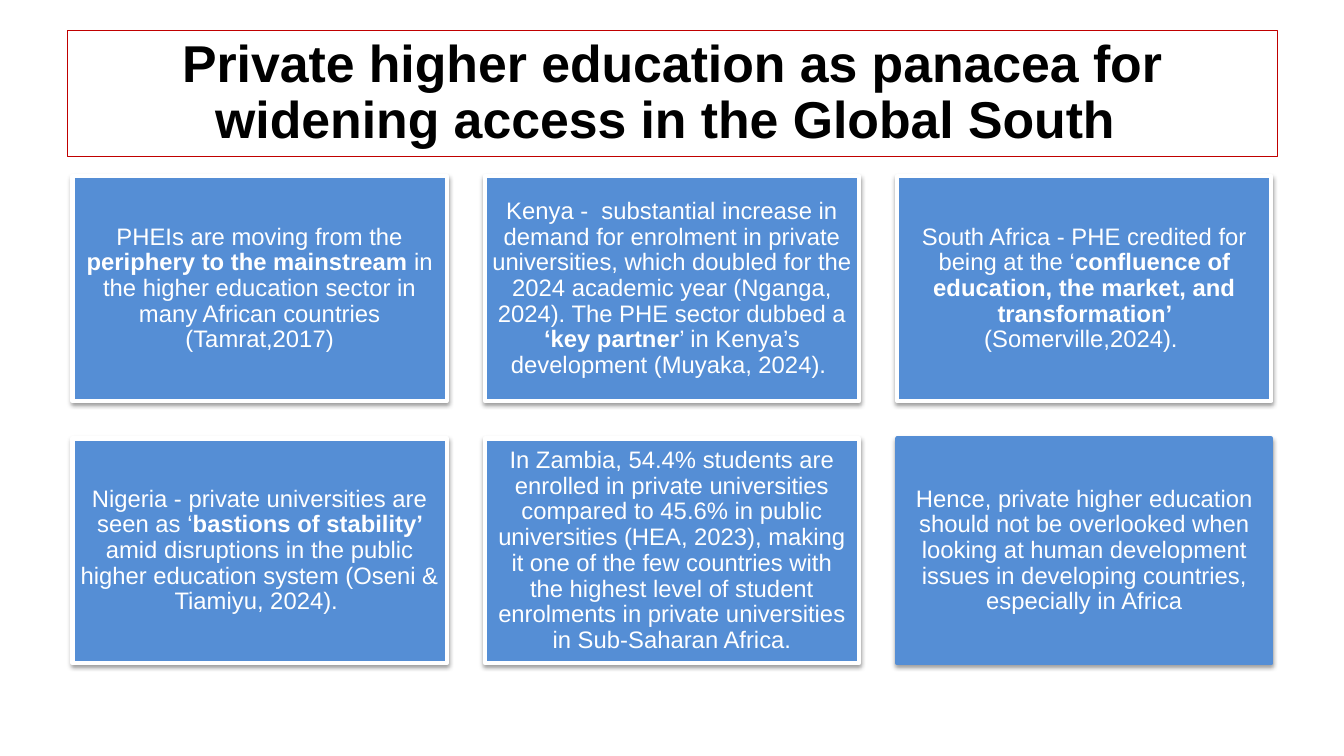
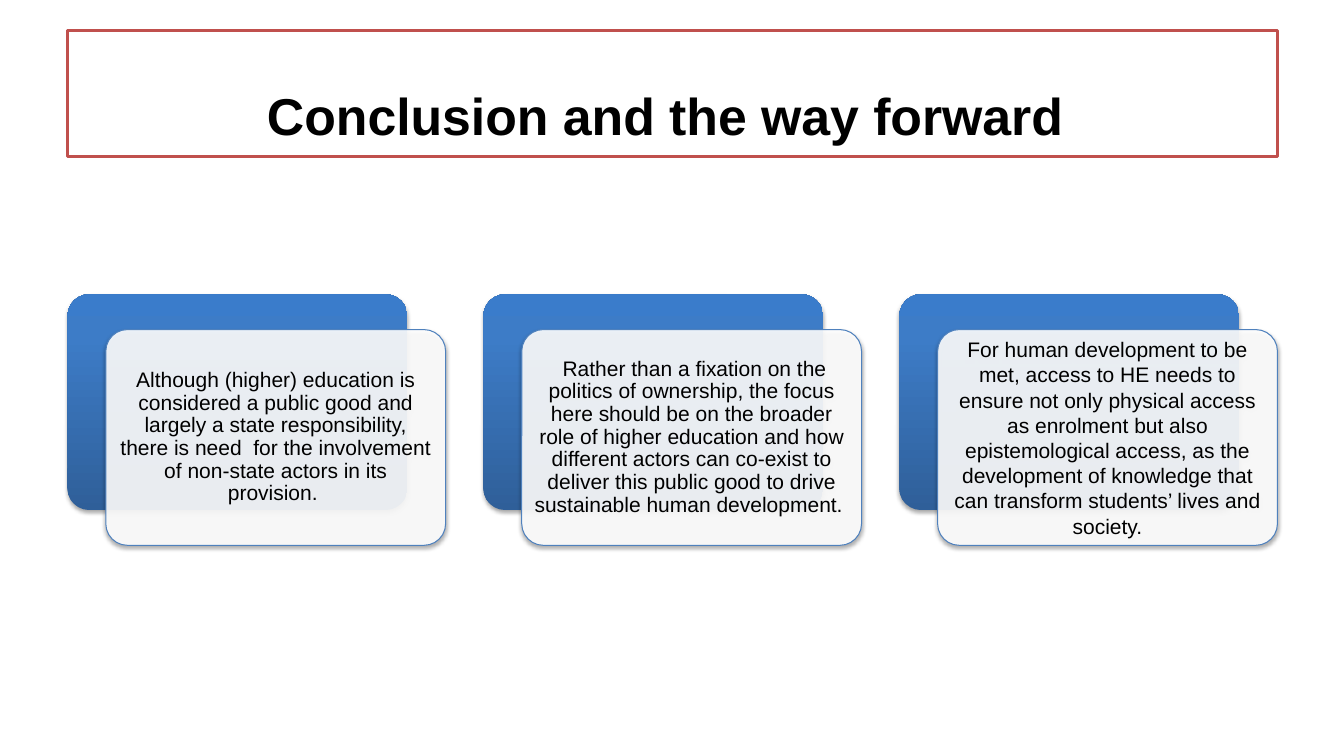
from dataclasses import dataclass

from lxml import etree
from pptx import Presentation
from pptx.dml.color import RGBColor
from pptx.enum.shapes import MSO_SHAPE as Shape
from pptx.enum.text import MSO_ANCHOR as Anchor, PP_ALIGN as Align
from pptx.oxml.ns import qn
from pptx.util import Inches, Pt


@dataclass(frozen=True)
class Theme:
    font: str = "Arial"
    white: str = "FFFFFF"
    black: str = "000000"
    title_red: str = "C00000"
    soft_red: str = "C0504D"
    card_blue: str = "558ED5"
    outline_blue: str = "4F81BD"
    panel_stops: tuple = ((0, "2F5F99"), (80, "3D7CC7"), (100, "3A7CCB"))
    title_size: int = 37
    card_size: int = 17
    panel_size: int = 15


THEME = Theme()

# Text between ** marks is bold
FINDINGS = [
    "PHEIs are moving from the **periphery to the mainstream **in the higher "
    "education sector in many African countries (Tamrat,2017)",
    "Kenya -  substantial increase in demand for enrolment in private universities, "
    "which doubled for the 2024 academic year (Nganga, 2024). The PHE sector dubbed a "
    "**‘key partner**’ in Kenya’s development (Muyaka, 2024). ",
    "South Africa - PHE credited for being at the ‘**confluence of education, the "
    "market, and transformation’ **(Somerville,2024). ",
    "Nigeria - private universities are seen as ‘**bastions of stability’ **amid "
    "disruptions in the public higher education system (Oseni & Tiamiyu, 2024). ",
    "In Zambia, 54.4% students are enrolled in private universities compared to 45.6% "
    "in public universities (HEA, 2023), making it one of the few countries with the "
    "highest level of student enrolments in private universities in Sub-Saharan Africa.",
    "Hence, private higher education should not be overlooked when looking at human "
    "development issues in developing countries, especially in Africa",
]

# Conclusion text with its line spacing
CONCLUSIONS = [
    ("Although (higher) education is considered a public good and largely a state "
     "responsibility, there is need  for the involvement of non-state actors in its "
     "provision. ", 0.9),
    (" Rather than a fixation on the politics of ownership, the focus here should be on "
     "the broader role of higher education and how different actors can co-exist to "
     "deliver this public good to drive sustainable human development. ", 0.9),
    ("For human development to be met, access to HE needs to ensure not only physical "
     "access as enrolment but also epistemological access, as the development of "
     "knowledge that can transform students’ lives and society.", 1.0),
]


def color(value):
    return RGBColor.from_string(value)


def add_box(slide, kind, left, top, width, height, fill=None, line=None, line_width=0.75):
    shape = slide.shapes.add_shape(
        kind, Inches(left), Inches(top), Inches(width), Inches(height))
    shape.shadow.inherit = False
    if fill:
        shape.fill.solid()
        shape.fill.fore_color.rgb = color(fill)
    else:
        shape.fill.background()
    if line:
        shape.line.color.rgb = color(line)
        shape.line.width = Pt(line_width)
    else:
        shape.line.fill.background()
    return shape


def write_text(shape, text, size, ink, bold=False, anchor=Anchor.MIDDLE,
               inset=0.07, spacing=0.9):
    frame = shape.text_frame
    frame.word_wrap = True
    frame.vertical_anchor = anchor
    frame.margin_left = frame.margin_right = Inches(inset)
    frame.margin_top = frame.margin_bottom = Inches(inset)
    paragraph = frame.paragraphs[0]
    paragraph.alignment = Align.CENTER
    paragraph.line_spacing = spacing
    for index, part in enumerate(text.split("**")):
        run = paragraph.add_run()
        run.text = part
        run.font.name = THEME.font
        run.font.size = Pt(size)
        run.font.bold = bold or index % 2 == 1
        run.font.color.rgb = color(ink)


def add_color_node(parent, value, opacity=None):
    node = etree.SubElement(parent, qn("a:srgbClr"), val=value)
    if opacity is not None:
        etree.SubElement(node, qn("a:alpha"), val=str(opacity * 1000))


def cast_shadow(shape, opacity, distance):
    effects = shape._element.spPr.find(qn("a:effectLst"))
    shadow = etree.SubElement(
        effects, qn("a:outerShdw"), blurRad=str(Pt(3.1)), dist=str(Pt(distance)),
        dir="5400000", rotWithShape="0")
    add_color_node(shadow, THEME.black, opacity)


def fill_gradient(shape, stops):
    shape.fill.gradient()
    shape.fill.gradient_angle = 90
    stop_list = shape._element.spPr.find(".//" + qn("a:gsLst"))
    for old_stop in list(stop_list):
        stop_list.remove(old_stop)
    for position, value in stops:
        stop = etree.SubElement(stop_list, qn("a:gs"), pos=str(position * 1000))
        add_color_node(stop, value)


def set_opacity(shape, percent):
    node = shape._element.spPr.find(qn("a:solidFill")).find(qn("a:srgbClr"))
    etree.SubElement(node, qn("a:alpha"), val=str(percent * 1000))


def add_title(slide, text, anchor=Anchor.MIDDLE, **box_format):
    title = add_box(slide, Shape.RECTANGLE, 0.67, 0.3, 12, 1.25, **box_format)
    write_text(title, text, THEME.title_size, THEME.black, bold=True,
               anchor=anchor, inset=0.1)


def add_card(slide, left, top, text, line):
    card = add_box(slide, Shape.RECTANGLE, left, top, 3.71, 2.23,
                   fill=THEME.card_blue, line=line, line_width=3)
    cast_shadow(card, 38, 1.6)
    write_text(card, text, THEME.card_size, THEME.white)


def add_layered_panel(slide, left, top, text, spacing):
    width, height = 3.37, 2.14
    back = add_box(slide, Shape.ROUNDED_RECTANGLE, left, top, width, height)
    fill_gradient(back, THEME.panel_stops)
    front = add_box(slide, Shape.ROUNDED_RECTANGLE, left + 0.38, top + 0.35, width, height,
                    fill=THEME.white, line=THEME.outline_blue)
    set_opacity(front, 90)
    for layer in (back, front):
        layer.adjustments[0] = 0.1
        cast_shadow(layer, 35, 1.8)
    write_text(front, text, THEME.panel_size, THEME.black, inset=0.06, spacing=spacing)


def build_findings(slide):
    add_title(slide, "Private higher education as panacea for widening access "
                     "in the Global South ", line=THEME.title_red)
    # Cards in rows of three; the closing card has no white frame
    for index, text in enumerate(FINDINGS):
        row, column = divmod(index, 3)
        is_last = index == len(FINDINGS) - 1
        add_card(slide, 0.72 + column * 4.09, 1.75 + row * 2.6, text,
                 THEME.card_blue if is_last else THEME.white)


def build_conclusion(slide):
    add_title(slide, "Conclusion and the way forward ", anchor=Anchor.BOTTOM,
              fill=THEME.white, line=THEME.soft_red, line_width=2)
    # Three equally spaced panels
    for column, (text, spacing) in enumerate(CONCLUSIONS):
        add_layered_panel(slide, 0.67 + column * 4.125, 2.92, text, spacing)


def main():
    presentation = Presentation()
    presentation.slide_width = Inches(13.33)
    presentation.slide_height = Inches(7.5)
    blank = presentation.slide_layouts[6]
    for build in (build_findings, build_conclusion):
        build(presentation.slides.add_slide(blank))
    presentation.save("out.pptx")


if __name__ == "__main__":
    main()
